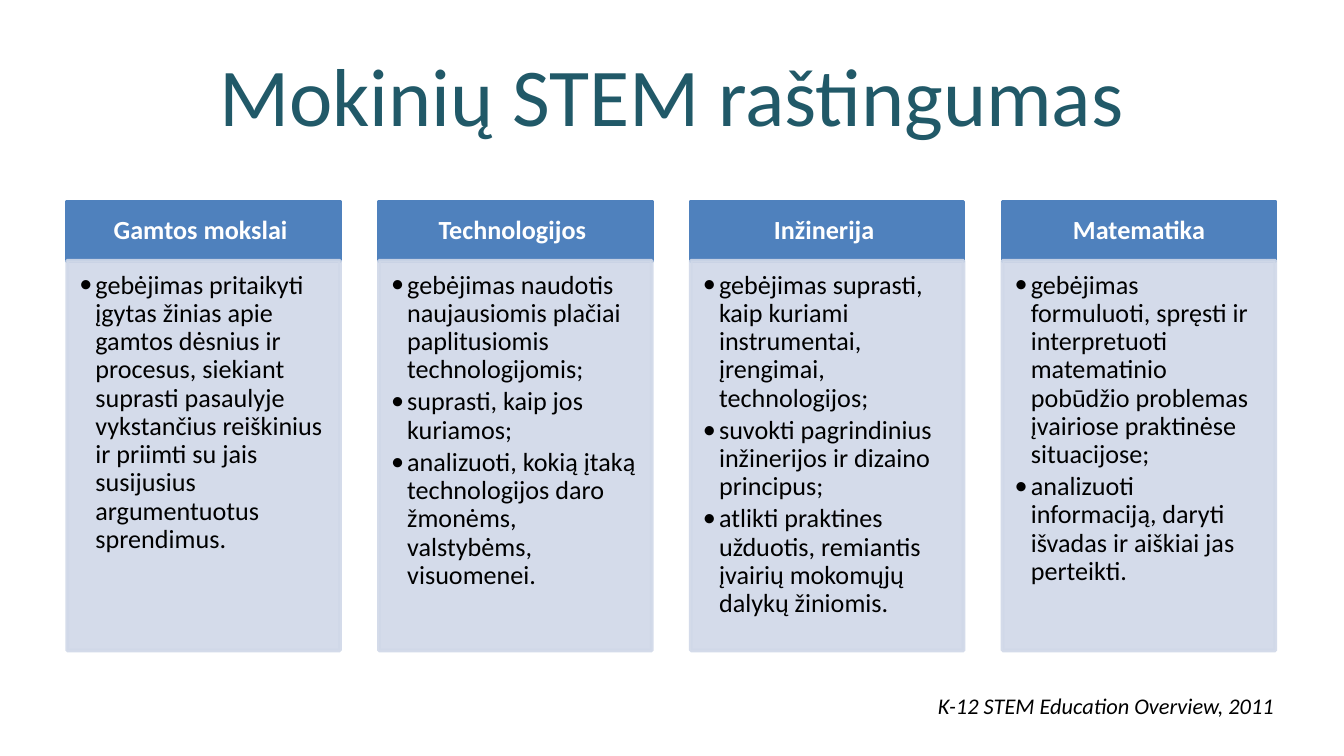
from dataclasses import dataclass

from lxml import etree
from pptx import Presentation
from pptx.dml.color import RGBColor
from pptx.enum.shapes import MSO_SHAPE
from pptx.enum.text import MSO_ANCHOR, PP_ALIGN
from pptx.oxml.ns import qn
from pptx.util import Inches, Pt

RECTANGLE = MSO_SHAPE.RECTANGLE
TOP, MIDDLE = MSO_ANCHOR.TOP, MSO_ANCHOR.MIDDLE
LEFT, CENTER = PP_ALIGN.LEFT, PP_ALIGN.CENTER

FONT = "Calibri"
TEAL = RGBColor(0x21, 0x59, 0x68)
BLUE = RGBColor(0x4F, 0x81, 0xBD)
PALE_BLUE = RGBColor(0xD0, 0xD8, 0xE8)
WHITE = RGBColor(0xFF, 0xFF, 0xFF)
BLACK = RGBColor(0x00, 0x00, 0x00)

COLUMN_LEFT, COLUMN_PITCH, COLUMN_WIDTH = 0.5, 2.32, 2.03
HEADER_TOP, HEADER_HEIGHT, BODY_HEIGHT = 1.5, 0.44, 2.9
BULLET_INDENT = 0.12


@dataclass
class Column:
    heading: str
    abilities: list[str]


COLUMNS = [
    Column("Gamtos mokslai ", [
        "gebėjimas pritaikyti įgytas žinias apie gamtos dėsnius ir procesus, "
        "siekiant suprasti pasaulyje vykstančius reiškinius ir priimti su jais "
        "susijusius argumentuotus sprendimus.",
    ]),
    Column("Technologijos ", [
        "gebėjimas naudotis naujausiomis plačiai paplitusiomis technologijomis;",
        "suprasti, kaip jos kuriamos;",
        "analizuoti, kokią įtaką technologijos daro žmonėms, valstybėms, visuomenei.",
    ]),
    Column("Inžinerija ", [
        "gebėjimas suprasti, kaip kuriami instrumentai, įrengimai, technologijos;",
        "suvokti pagrindinius inžinerijos ir dizaino principus;",
        "atlikti praktines užduotis, remiantis įvairių mokomųjų dalykų žiniomis.",
    ]),
    Column("Matematika", [
        "gebėjimas formuluoti, spręsti ir interpretuoti matematinio pobūdžio "
        "problemas įvairiose praktinėse situacijose;",
        "analizuoti informaciją, daryti išvadas ir aiškiai jas perteikti.",
    ]),
]


def style_font(paragraph, size: float, color: RGBColor,
               bold: bool = False, italic: bool = False) -> None:
    font = paragraph.font
    font.name, font.size = FONT, Pt(size)
    font.bold, font.italic = bold, italic
    font.color.rgb = color


def set_margins(frame, left: float, top: float, right: float, bottom: float) -> None:
    frame.margin_left, frame.margin_top = Inches(left), Inches(top)
    frame.margin_right, frame.margin_bottom = Inches(right), Inches(bottom)


def add_bullet(paragraph) -> None:
    """Give the paragraph a hanging round bullet."""
    properties = paragraph._p.get_or_add_pPr()
    properties.set("marL", str(Inches(BULLET_INDENT)))
    properties.set("indent", str(-Inches(BULLET_INDENT)))
    etree.SubElement(properties, qn("a:buFont"), typeface=FONT)
    etree.SubElement(properties, qn("a:buChar"), char="•")


def make_translucent(shape, percent: int) -> None:
    """Set the opacity of the shape's fill and line."""
    for color in shape._element.spPr.iter(qn("a:srgbClr")):
        etree.SubElement(color, qn("a:alpha"), val=str(percent * 1000))


def add_box(slide, left: float, top: float, height: float, color: RGBColor):
    shape = slide.shapes.add_shape(
        RECTANGLE, Inches(left), Inches(top), Inches(COLUMN_WIDTH), Inches(height))
    shape.shadow.inherit = False
    shape.fill.solid()
    shape.fill.fore_color.rgb = color
    shape.line.color.rgb = color
    shape.line.width = Pt(2)
    shape.text_frame.word_wrap = True
    return shape


def add_column(slide, column: Column, left: float) -> None:
    header = add_box(slide, left, HEADER_TOP, HEADER_HEIGHT, BLUE)
    frame = header.text_frame
    frame.vertical_anchor = MIDDLE
    set_margins(frame, 0.11, 0.06, 0.11, 0.06)
    paragraph = frame.paragraphs[0]
    paragraph.text = column.heading
    paragraph.alignment = CENTER
    paragraph.line_spacing = 0.9
    style_font(paragraph, 14, WHITE, bold=True)

    body = add_box(slide, left, HEADER_TOP + HEADER_HEIGHT, BODY_HEIGHT, PALE_BLUE)
    make_translucent(body, 90)
    frame = body.text_frame
    frame.vertical_anchor = TOP
    set_margins(frame, 0.09, 0.08, 0.11, 0.12)
    for index, ability in enumerate(column.abilities):
        paragraph = frame.add_paragraph() if index else frame.paragraphs[0]
        paragraph.text = ability
        paragraph.alignment = LEFT
        paragraph.line_spacing = 0.9
        paragraph.space_after = Pt(2.1)
        add_bullet(paragraph)
        style_font(paragraph, 14, BLACK)


def add_text(slide, text: str, left: float, top: float, width: float, height: float):
    box = slide.shapes.add_textbox(
        Inches(left), Inches(top), Inches(width), Inches(height))
    box.text_frame.text = text
    return box.text_frame


def main() -> None:
    presentation = Presentation()
    presentation.slide_width = Inches(10)
    presentation.slide_height = presentation.slide_width * 9 // 16
    slide = presentation.slides.add_slide(presentation.slide_layouts[6])

    title = add_text(slide, "Mokinių STEM raštingumas", 0.5, 0.23, 9, 0.94)
    title.word_wrap = True
    title.vertical_anchor = MIDDLE
    title.paragraphs[0].alignment = CENTER
    style_font(title.paragraphs[0], 44, TEAL)

    for index, column in enumerate(COLUMNS):
        add_column(slide, column, COLUMN_LEFT + index * COLUMN_PITCH)

    source = add_text(slide, "K-12 STEM Education Overview, 2011", 6.88, 5.1, 2.75, 0.3)
    style_font(source.paragraphs[0], 12, BLACK, italic=True)

    presentation.save("out.pptx")


if __name__ == "__main__":
    main()
